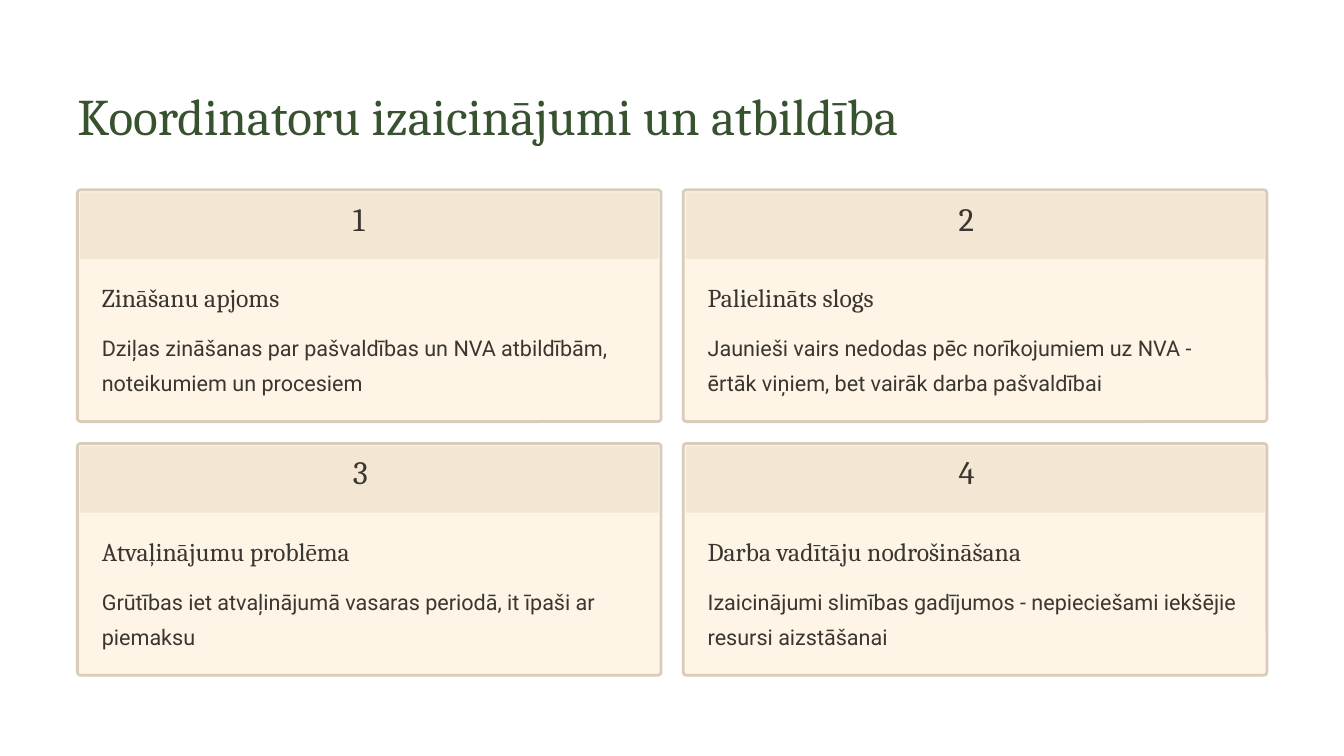
"""Build the slide on coordinators' challenges: a title and a two-by-two grid of numbered cards."""
from dataclasses import dataclass

from pptx import Presentation
from pptx.dml.color import RGBColor as RGB
from pptx.enum.shapes import MSO_SHAPE as Shape
from pptx.enum.text import MSO_ANCHOR as Anchor, MSO_AUTO_SIZE as AutoSize, PP_ALIGN as Align
from pptx.shapes.autoshape import Shape as AutoShape
from pptx.slide import Slide
from pptx.util import Cm, Pt


@dataclass(frozen=True)
class TextStyle:
    font: str
    size: float
    leading: float
    color: str


@dataclass(frozen=True)
class Theme:
    card: str = "FEF5E7"
    band: str = "F3E7D4"
    border: str = "D9CDBA"
    border_width: float = 2.4
    title: TextStyle = TextStyle("Cambria", 44, 55, "38512F")
    number: TextStyle = TextStyle("Cambria", 28, 28, "3A3630")
    heading: TextStyle = TextStyle("Cambria", 22, 27.5, "3A3630")
    body: TextStyle = TextStyle("Roboto", 18.5, 30, "3A3630")


@dataclass(frozen=True)
class Box:
    left: float
    top: float
    width: float
    height: float

    def shifted(self, dx: float, dy: float) -> "Box":
        return Box(self.left + dx, self.top + dy, self.width, self.height)

    def lengths(self) -> tuple[Cm, Cm, Cm, Cm]:
        return Cm(self.left), Cm(self.top), Cm(self.width), Cm(self.height)


@dataclass(frozen=True)
class Card:
    heading: str
    body: str


THEME = Theme()
COLUMNS = 2
COLUMN_STEP, ROW_STEP = 18.32, 7.67
TITLE_BOX = Box(2.34, 2.46, 27.89, 1.96)
CARD_BOX = Box(2.34, 5.74, 17.65, 7.01)
BAND_BOX = Box(2.42, 5.82, 17.5, 2.01)
NUMBER_BOX = Box(10.67, 6.2, 0.99, 1.24)
HEADING_BOX = Box(3.08, 8.48, 10.75, 0.97)
BODY_BOX = Box(3.08, 9.86, 16.15, 2.13)

TITLE = "Koordinatoru izaicinājumi un atbildība"
CARDS = [
    Card("Zināšanu apjoms",
         "Dziļas zināšanas par pašvaldības un NVA atbildībām, noteikumiem un procesiem"),
    Card("Palielināts slogs",
         "Jaunieši vairs nedodas pēc norīkojumiem uz NVA - ērtāk viņiem, bet vairāk darba pašvaldībai"),
    Card("Atvaļinājumu problēma",
         "Grūtības iet atvaļinājumā vasaras periodā, it īpaši ar piemaksu"),
    Card("Darba vadītāju nodrošināšana",
         "Izaicinājumi slimības gadījumos - nepieciešami iekšējie resursi aizstāšanai"),
]
FRAME_FORMAT = {
    "margin_left": 0, "margin_top": 0, "margin_right": 0, "margin_bottom": 0,
    "word_wrap": True, "auto_size": AutoSize.NONE, "vertical_anchor": Anchor.TOP,
}


def write(sp: AutoShape, text: str, style: TextStyle) -> None:
    tf = sp.text_frame
    for name, value in FRAME_FORMAT.items():
        setattr(tf, name, value)
    p = tf.paragraphs[0]
    paragraph_format = {"alignment": Align.LEFT, "line_spacing": Pt(style.leading),
                        "space_before": Pt(0)}
    for name, value in paragraph_format.items():
        setattr(p, name, value)
    r = p.add_run()
    r.text = text
    for name, value in {"name": style.font, "size": Pt(style.size)}.items():
        setattr(r.font, name, value)
    r.font.color.rgb = RGB.from_string(style.color)


def add_title(s: Slide, text: str) -> None:
    sp = s.shapes.title
    for name, value in zip(("left", "top", "width", "height"), TITLE_BOX.lengths()):
        setattr(sp, name, value)
    write(sp, text, THEME.title)


def add_text(s: Slide, box: Box, text: str, style: TextStyle) -> None:
    write(s.shapes.add_textbox(*box.lengths()), text, style)


def add_panel(s: Slide, kind: Shape, box: Box, fill: str) -> AutoShape:
    sp = s.shapes.add_shape(kind, *box.lengths())
    sp.shadow.inherit = False
    sp.fill.solid()
    sp.fill.fore_color.rgb = RGB.from_string(fill)
    sp.line.fill.background()
    return sp


def add_card(s: Slide, index: int, card: Card) -> None:
    row, column = divmod(index, COLUMNS)
    dx, dy = column * COLUMN_STEP, row * ROW_STEP
    sp = add_panel(s, Shape.ROUNDED_RECTANGLE, CARD_BOX.shifted(dx, dy), THEME.card)
    sp.adjustments[0] = 0.014
    sp.line.color.rgb = RGB.from_string(THEME.border)
    sp.line.width = Pt(THEME.border_width)
    add_panel(s, Shape.RECTANGLE, BAND_BOX.shifted(dx, dy), THEME.band)
    for box, text, style in (
        (NUMBER_BOX, str(index + 1), THEME.number),
        (HEADING_BOX, card.heading, THEME.heading),
        (BODY_BOX, card.body, THEME.body),
    ):
        add_text(s, box.shifted(dx, dy), text, style)


def main() -> None:
    prs = Presentation()
    prs.slide_width, prs.slide_height = Cm(40.64), Cm(22.86)
    s = prs.slides.add_slide(prs.slide_layouts.get_by_name("Title Only"))
    add_title(s, TITLE)
    for index, card in enumerate(CARDS):
        add_card(s, index, card)
    prs.save("out.pptx")


if __name__ == "__main__":
    main()
